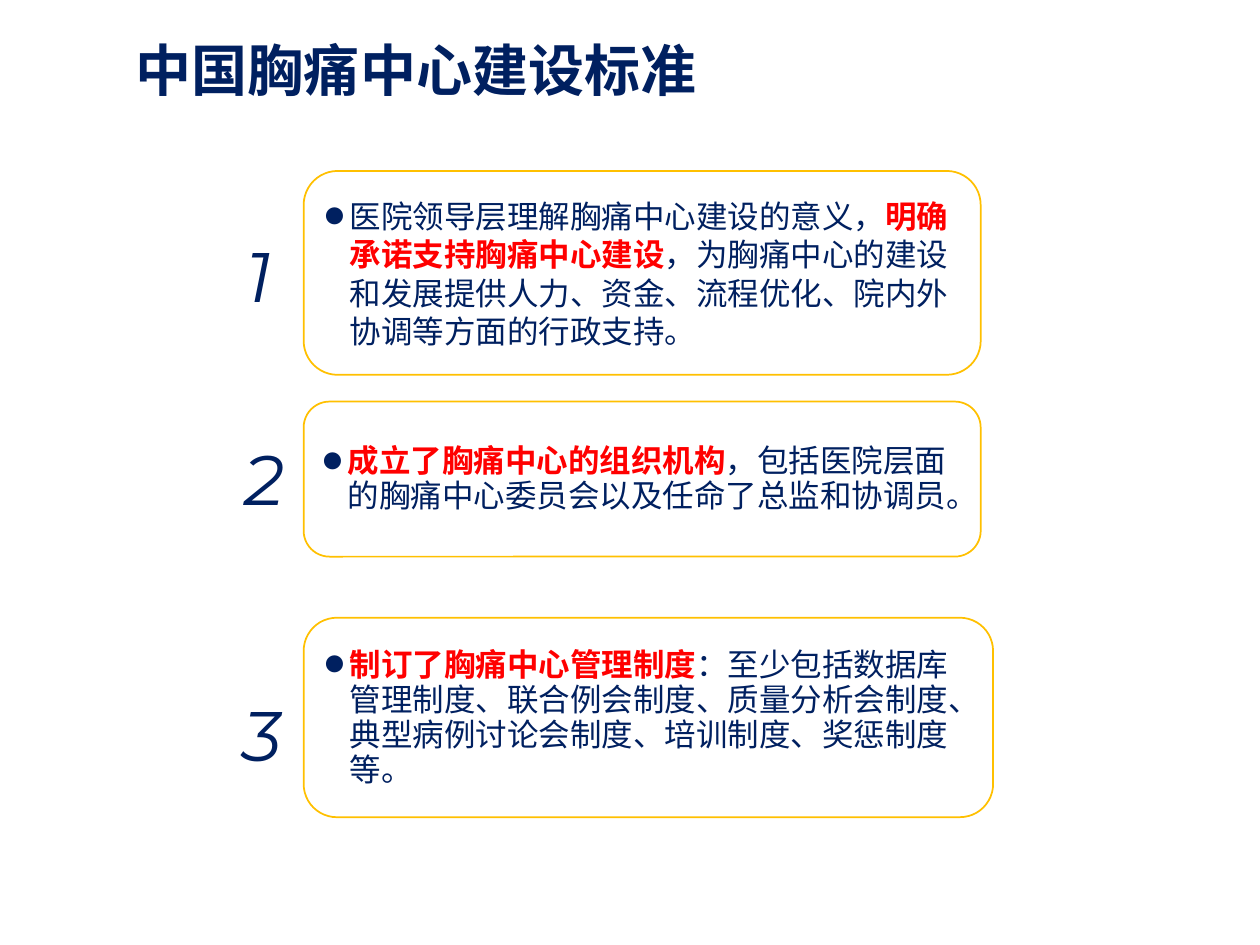
from typing import NamedTuple

from lxml.etree import SubElement
from pptx import Presentation
from pptx.dml.color import RGBColor
from pptx.enum.shapes import MSO_SHAPE
from pptx.enum.text import MSO_ANCHOR, MSO_AUTO_SIZE, PP_ALIGN
from pptx.oxml.ns import qn
from pptx.util import Pt

NAVY = RGBColor(0x00, 0x20, 0x60)
RED = RGBColor(0xFF, 0x00, 0x00)
GOLD = RGBColor(0xFF, 0xC0, 0x00)
WHITE = RGBColor(0xFF, 0xFF, 0xFF)
CHINESE_FONT = "Noto Sans CJK SC"
NUMBER_FONT = "Montserrat"

CARD_LEFT = 173.5
INDENT = 13.7
NUMBER_WIDTH, NUMBER_HEIGHT = 28, 55.5


class Phrase(NamedTuple):
    text: str
    key: bool = False


class Standard(NamedTuple):
    number: str
    number_left: float
    number_top: float
    top: float
    width: float
    height: float
    line_spacing: float
    phrases: tuple[Phrase, ...]


STANDARDS = (
    Standard("1", 134, 129.5, 97.7, 386.9, 116.5, 22, (
        Phrase("医院领导层理解胸痛中心建设的意义，"),
        Phrase("明确承诺支持胸痛中心建设", key=True),
        Phrase("，为胸痛中心的建设和发展提供人力、资金、流程优化、院内外协调等方面的行政支持。"),
    )),
    Standard("2", 132.5, 245.5, 229.5, 386.9, 88.6, 20, (
        Phrase("成立了胸痛中心的组织机构", key=True),
        Phrase("，包括医院层面的胸痛中心委员会以及任命了总监和协调员。"),
    )),
    Standard("3", 131.5, 391.5, 353, 394, 114, 20, (
        Phrase("制订了胸痛中心管理制度", key=True),
        Phrase("：至少包括数据库管理制度、联合例会制度、质量分析会制度、"
               "典型病例讨论会制度、培训制度、奖惩制度等。"),
    )),
)


def set_attributes(target, **values) -> None:
    for name, value in values.items():
        setattr(target, name, value)


def add_run(paragraph, text: str, size: float, color: RGBColor,
            typeface: str = CHINESE_FONT, bold: bool = False, italic: bool = False) -> None:
    run = paragraph.add_run()
    run.text = text
    set_attributes(run.font, name=typeface, size=Pt(size), bold=bold, italic=italic)
    run.font.color.rgb = color
    SubElement(run.font._element, qn("a:ea"), typeface=typeface)


def add_bullet(paragraph) -> None:
    properties = paragraph._p.get_or_add_pPr()
    properties.set("marL", str(Pt(INDENT)))
    properties.set("indent", str(-Pt(INDENT)))
    bullet_color = SubElement(properties, qn("a:buClr"))
    SubElement(bullet_color, qn("a:srgbClr"), val=str(NAVY))
    SubElement(properties, qn("a:buSzPct"), val="60000")
    SubElement(properties, qn("a:buFont"), typeface=CHINESE_FONT)
    SubElement(properties, qn("a:buChar"), char="●")


def format_title(slide, text: str) -> None:
    title = slide.shapes.title
    set_attributes(title, left=Pt(70.5), top=Pt(16.5), width=Pt(360), height=Pt(46))
    set_attributes(title.text_frame, word_wrap=True, auto_size=MSO_AUTO_SIZE.NONE,
                   vertical_anchor=MSO_ANCHOR.MIDDLE, margin_top=0, margin_bottom=0)
    paragraph = title.text_frame.paragraphs[0]
    paragraph.alignment = PP_ALIGN.LEFT
    add_run(paragraph, text, 32, NAVY, bold=True)


def add_card(slide, standard: Standard) -> None:
    card = slide.shapes.add_shape(
        MSO_SHAPE.ROUNDED_RECTANGLE, Pt(CARD_LEFT), Pt(standard.top),
        Pt(standard.width), Pt(standard.height))
    card.shadow.inherit = False
    card.fill.solid()
    card.fill.fore_color.rgb = WHITE
    card.line.color.rgb = GOLD
    card.line.width = Pt(1)
    set_attributes(card.text_frame, word_wrap=True, vertical_anchor=MSO_ANCHOR.MIDDLE)
    paragraph = card.text_frame.paragraphs[0]
    add_bullet(paragraph)
    set_attributes(paragraph, alignment=PP_ALIGN.LEFT, line_spacing=Pt(standard.line_spacing))
    for phrase in standard.phrases:
        add_run(paragraph, phrase.text, 18, RED if phrase.key else NAVY, bold=phrase.key)


def add_number(slide, standard: Standard) -> None:
    box = slide.shapes.add_textbox(Pt(standard.number_left), Pt(standard.number_top),
                                   Pt(NUMBER_WIDTH), Pt(NUMBER_HEIGHT))
    box.text_frame.word_wrap = True
    add_run(box.text_frame.paragraphs[0], standard.number, 40, NAVY, NUMBER_FONT, italic=True)


def main() -> None:
    presentation = Presentation()
    set_attributes(presentation, slide_width=Pt(720), slide_height=Pt(540))
    slide = presentation.slides.add_slide(presentation.slide_layouts.get_by_name("Title Only"))
    format_title(slide, "中国胸痛中心建设标准")
    for standard in STANDARDS:
        add_card(slide, standard)
        add_number(slide, standard)
    presentation.save("out.pptx")


if __name__ == "__main__":
    main()
